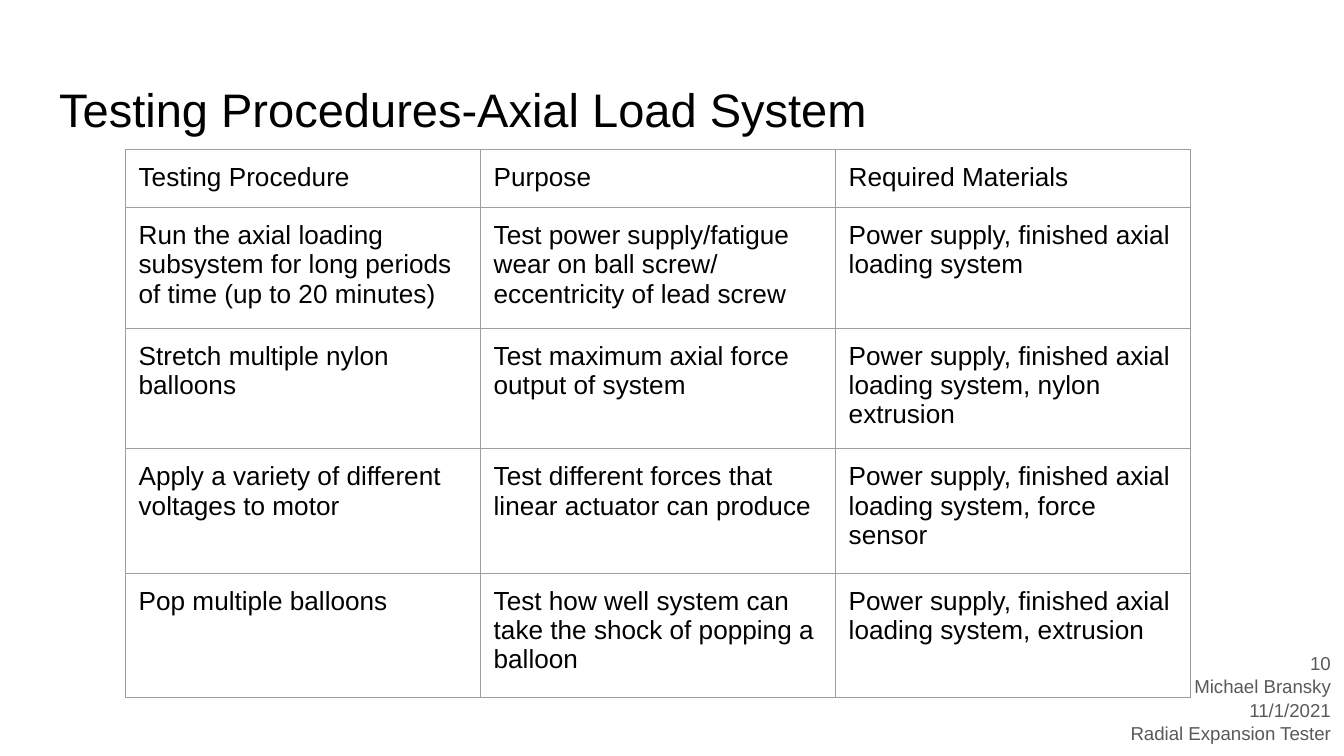
from dataclasses import dataclass

from lxml import etree
from pptx import Presentation
from pptx import util as u
from pptx.dml.color import RGBColor
from pptx.enum import text
from pptx.oxml import ns

BLACK = RGBColor(0x00, 0x00, 0x00)
GREY = RGBColor(0x59, 0x59, 0x59)
BORDER = RGBColor(0x9E, 0x9E, 0x9E)
FONT = "Arial"
INSET = u.Cm(0.25)
COLUMN_WIDTH = 6.71


@dataclass(frozen=True)
class TextBlock:
    left: float
    top: float
    width: float
    height: float
    lines: tuple[str, ...]
    size: float
    color: RGBColor
    alignment: text.PP_ALIGN = text.PP_ALIGN.LEFT
    anchor: text.MSO_ANCHOR = text.MSO_ANCHOR.TOP
    spacing: float = 1.0


@dataclass(frozen=True)
class TableRow:
    height: float
    procedure: str
    purpose: str
    materials: str


TITLE = TextBlock(0.87, 1.24, 23.67, 1.6, ("Testing Procedures-Axial Load System",),
                  25.2, BLACK, anchor=text.MSO_ANCHOR.BOTTOM)
FOOTER = TextBlock(17.07, 12.06, 8.33, 2.23,
                   ("10", "Michael Bransky", "11/1/2021", "Radial Expansion Tester"),
                   10, GREY, alignment=text.PP_ALIGN.RIGHT, spacing=1.04)
ROWS = (
    TableRow(1.06, "Testing Procedure", "Purpose", "Required Materials"),
    TableRow(2.17, "Run the axial loading subsystem for long periods of time (up to 20 minutes)",
             "Test power supply/fatigue wear on ball screw/ eccentricity of lead screw",
             "Power supply, finished axial loading system"),
    TableRow(2.17, "Stretch multiple nylon balloons",
             "Test maximum axial force output of system",
             "Power supply, finished axial loading system, nylon extrusion"),
    TableRow(2.35, "Apply a variety of different voltages to motor",
             "Test different forces that linear actuator can produce",
             "Power supply, finished axial loading system, force sensor"),
    TableRow(2.35, "Pop multiple balloons",
             "Test how well system can take the shock of popping a balloon",
             "Power supply, finished axial loading system, extrusion"),
)


def set_font(paragraph, size: float, color: RGBColor) -> None:
    paragraph.font.name = FONT
    paragraph.font.size = u.Pt(size)
    paragraph.font.color.rgb = color


def set_margins(target) -> None:
    target.margin_left = target.margin_right = INSET
    target.margin_top = target.margin_bottom = INSET


def add_text(slide, block: TextBlock) -> None:
    shape = slide.shapes.add_textbox(u.Cm(block.left), u.Cm(block.top),
                                     u.Cm(block.width), u.Cm(block.height))
    frame = shape.text_frame
    frame.word_wrap = True
    frame.vertical_anchor = block.anchor
    set_margins(frame)
    frame.text = "\n".join(block.lines)
    for paragraph in frame.paragraphs:
        paragraph.alignment = block.alignment
        paragraph.line_spacing = block.spacing
        set_font(paragraph, block.size, block.color)


def add_borders(cell) -> None:
    properties = cell._tc.get_or_add_tcPr()
    for position, side in enumerate(("lnL", "lnR", "lnT", "lnB")):
        line = etree.Element(ns.qn(f"a:{side}"), w=str(u.Pt(0.75)))
        fill = etree.SubElement(line, ns.qn("a:solidFill"))
        etree.SubElement(fill, ns.qn("a:srgbClr"), val=str(BORDER))
        properties.insert(position, line)


def add_procedure_table(slide, rows: tuple[TableRow, ...]) -> None:
    height = sum(row.height for row in rows)
    table = slide.shapes.add_table(len(rows), 3, u.Cm(2.37), u.Cm(2.83),
                                   u.Cm(3 * COLUMN_WIDTH), u.Cm(height)).table
    table.first_row = table.horz_banding = False
    for column in table.columns:
        column.width = u.Cm(COLUMN_WIDTH)
    for table_row, row in zip(table.rows, rows):
        table_row.height = u.Cm(row.height)
        for cell, words in zip(table_row.cells, (row.procedure, row.purpose, row.materials)):
            cell.text = words
            cell.fill.background()
            set_margins(cell)
            set_font(cell.text_frame.paragraphs[0], 14, BLACK)
            add_borders(cell)


def main() -> None:
    presentation = Presentation()
    presentation.slide_width = u.Cm(25.4)
    presentation.slide_height = u.Cm(14.29)
    slide = presentation.slides.add_slide(presentation.slide_layouts[6])
    add_text(slide, TITLE)
    add_procedure_table(slide, ROWS)
    add_text(slide, FOOTER)
    presentation.save("out.pptx")


if __name__ == "__main__":
    main()
